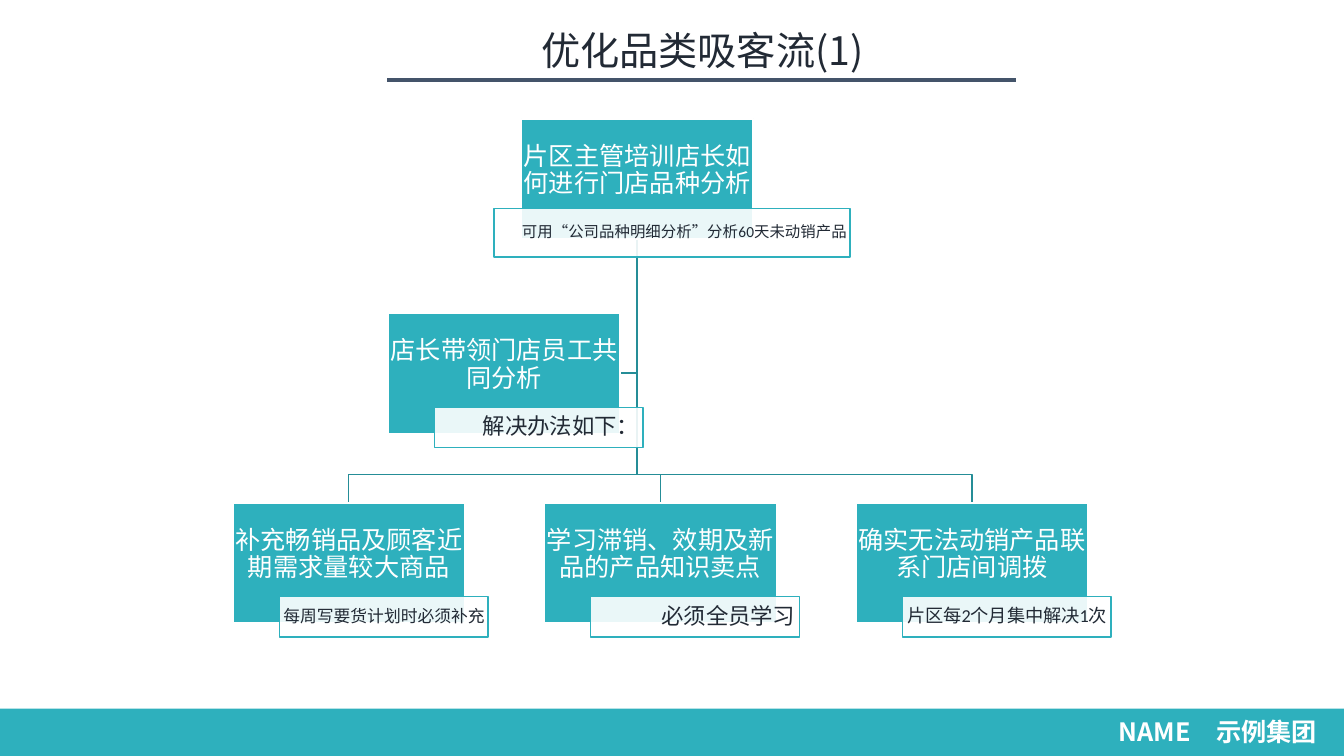
import pptx
import pptx.util
import pptx.dml.color
import pptx.enum.shapes
import pptx.enum.text
import lxml.etree
from pptx.oxml.ns import qn

RGBColor = pptx.dml.color.RGBColor
Inches = pptx.util.Inches
Pt = pptx.util.Pt
ALIGN = pptx.enum.text.PP_ALIGN
MIDDLE = pptx.enum.text.MSO_ANCHOR.MIDDLE
RECT = pptx.enum.shapes.MSO_SHAPE.RECTANGLE

TEAL = RGBColor(0x2E, 0xB0, 0xBD)
DARK_TEAL = RGBColor(0x25, 0x8D, 0x97)
SLATE = RGBColor(0x44, 0x54, 0x6A)
INK = RGBColor(0x22, 0x2A, 0x35)
WHITE = RGBColor(0xFF, 0xFF, 0xFF)
BODY_FONT, HEAD_FONT = "Calibri", "Noto Sans CJK SC"

W, H = 13.33, 7.5
prs = pptx.Presentation()
prs.slide_width, prs.slide_height = Inches(W), Inches(H)
s = prs.slides.add_slide(prs.slide_layouts[6])


def add_rect(x, y, w, h, fill, line=None):
    sp = s.shapes.add_shape(RECT, Inches(x), Inches(y), Inches(w), Inches(h))
    sp.shadow.inherit = False
    sp.fill.solid()
    sp.fill.fore_color.rgb = fill
    if line is None:
        sp.line.fill.background()
    else:
        sp.line.color.rgb = line
        sp.line.width = Pt(1)
    return sp


def set_text(sp, text, size, color, font, align, margins):
    tf = sp.text_frame
    tf.word_wrap = True
    tf.vertical_anchor = MIDDLE
    (tf.margin_left, tf.margin_top,
     tf.margin_right, tf.margin_bottom) = [Inches(m) for m in margins]
    p = tf.paragraphs[0]
    p.text = text
    p.alignment = align
    p.line_spacing = 0.9
    p.font.size = Pt(size)
    p.font.name = font
    p.font.color.rgb = color
    return p


# Title and its rule
sp = s.shapes.add_textbox(Inches(2.74), Inches(0.25), Inches(8.45), Inches(0.55))
set_text(sp, "优化品类吸客流(1)", 28, INK, HEAD_FONT, ALIGN.CENTER, (0, 0.05, 0, 0.05))
rule = s.shapes.add_connector(pptx.enum.shapes.MSO_CONNECTOR.STRAIGHT,
                              Inches(3.84), Inches(0.79), Inches(10.08), Inches(0.79))
rule.line.color.rgb = SLATE
rule.line.width = Pt(3)
lxml.etree.SubElement(rule._element.spPr, qn("a:effectLst"))

# Footer band
add_rect(0, 7.03, W, H - 7.03, TEAL)
sp = s.shapes.add_textbox(Inches(11), Inches(7.08), Inches(2.33), Inches(0.4))
p = set_text(sp, "NAME　示例集团", 18, WHITE, HEAD_FONT, ALIGN.LEFT, (0.1, 0.05, 0, 0.05))
p.font.bold = True

# Chart grid: three columns under a root, with an assistant on the left
BOX_W, BOX_H = 2.3, 1.19
COLS = [2.31 + 3.09 * i for i in range(3)]
ROOT_X, ROOT_Y = 5.17, 1.18
AIDE_X, AIDE_Y = 3.85, 3.11
LEAF_Y, BUS_Y = 4.99, 4.71
STEM_X, STEM_Y = ROOT_X + BOX_W / 2, ROOT_Y + BOX_H

# Branch lines
branches = [[(STEM_X, 3.7), (AIDE_X + BOX_W, 3.7)]]
for x in COLS:
    leaf_x = x + BOX_W / 2
    branches.append([(STEM_X, BUS_Y), (leaf_x, BUS_Y), (leaf_x, LEAF_Y)])
for points in branches:
    fb = s.shapes.build_freeform(Inches(STEM_X), Inches(STEM_Y))
    fb.add_line_segments([(Inches(x), Inches(y)) for x, y in points], close=False)
    sp = fb.convert_to_shape()
    sp.shadow.inherit = False
    sp.fill.background()
    sp.line.color.rgb = DARK_TEAL
    sp.line.width = Pt(1)

# Boxes, each with a caption: x, y, title, caption, caption size
nodes = [
    (ROOT_X, ROOT_Y, "片区主管培训店长如何进行门店品种分析",
     "可用“公司品种明细分析”分析60天未动销产品", 11),
    (COLS[0], LEAF_Y, "补充畅销品及顾客近期需求量较大商品", "每周写要货计划时必须补充", 12),
    (COLS[1], LEAF_Y, "学习滞销、效期及新品的产品知识卖点", "必须全员学习", 16),
    (COLS[2], LEAF_Y, "确实无法动销产品联系门店间调拨", "片区每2个月集中解决1次", 13),
    (AIDE_X, AIDE_Y, "店长带领门店员工共同分析", "解决办法如下：", 16),
]
for x, y, title, caption, size in nodes:
    sp = add_rect(x, y, BOX_W, BOX_H, TEAL, WHITE)
    set_text(sp, title, 18, WHITE, BODY_FONT, ALIGN.CENTER, (0.01, 0.01, 0.01, 0.17))
    if y == ROOT_Y:
        frame = (4.9, 2.07, 3.53, 0.48)
    else:
        frame = (x + 0.46, y + 0.93, 2.07, 0.4)
    sp = add_rect(*frame, WHITE, TEAL)
    color = sp._element.spPr.find(qn("a:solidFill"))[0]
    lxml.etree.SubElement(color, qn("a:alpha"), val="90000")
    side = 0.03 if size < 13 else 0.04
    set_text(sp, caption, size, INK, BODY_FONT, ALIGN.RIGHT, (side, 0.01, side, 0.01))

prs.save("out.pptx")
